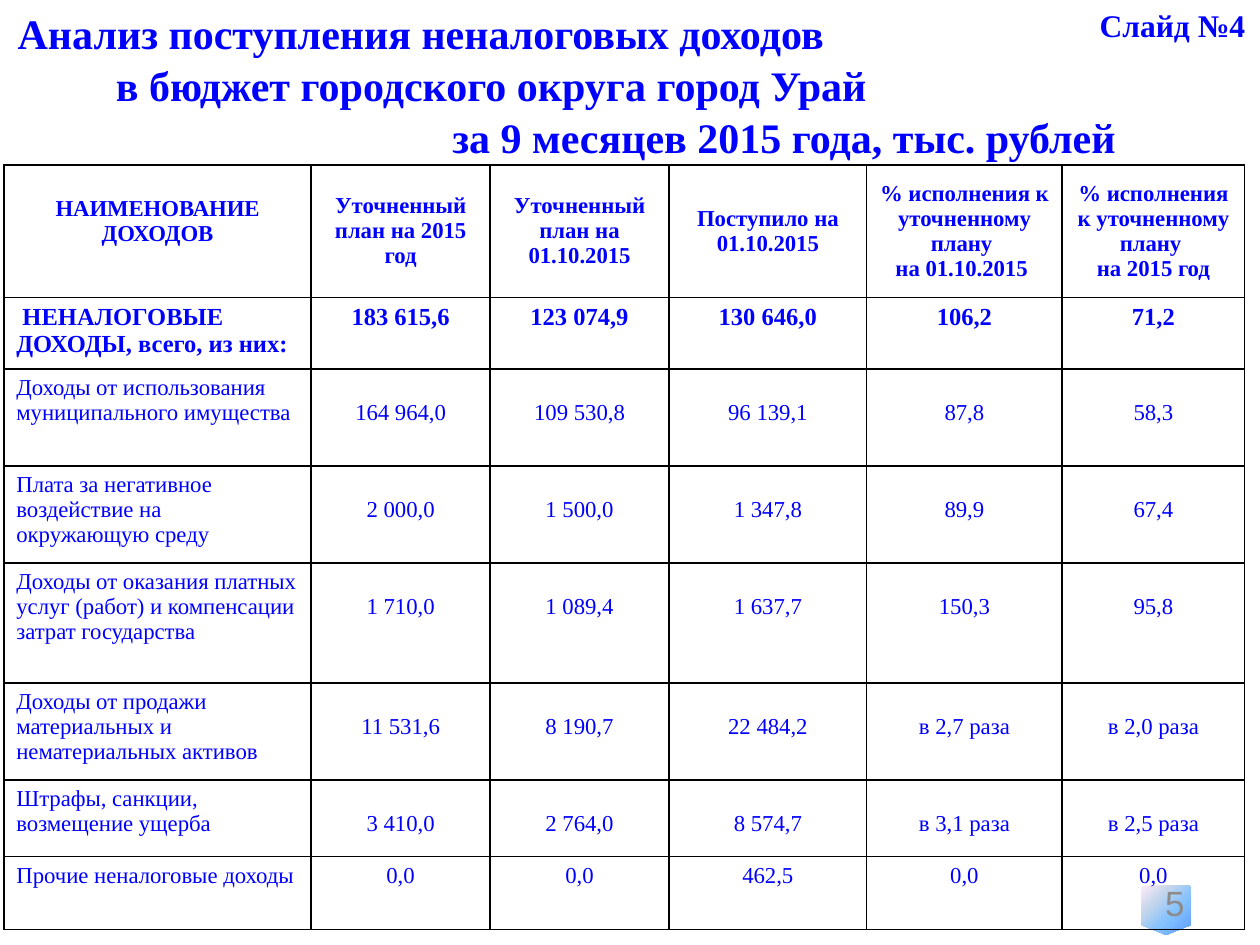
from dataclasses import dataclass

from lxml.etree import SubElement
from pptx import Presentation
from pptx.dml.color import RGBColor
from pptx.enum.shapes import MSO_SHAPE as Shape
from pptx.enum.text import MSO_ANCHOR as Anchor, MSO_AUTO_SIZE as AutoSize, PP_ALIGN as Align
from pptx.oxml import parse_xml
from pptx.oxml.ns import nsdecls, qn
from pptx.util import Inches, Pt


@dataclass(frozen=True)
class Theme:
    font: str = "Times New Roman"
    number_font: str = "Arial"
    text: str = "0000FF"
    number: str = "8C8C8C"
    border: str = "000000"
    badge: tuple = ((0, "5E9EFF"), (40, "85C2FF"), (70, "C4D6EB"), (100, "FFEBFA"))
    title_size: int = 24
    label_size: int = 18
    number_size: int = 20
    total_size: int = 14
    cell_size: int = 13


@dataclass(frozen=True)
class Row:
    name: str
    values: tuple
    height: float
    size: int
    bold: bool = False
    name_align: Align = Align.LEFT
    name_drop: float = 0
    value_drop: float = 0.2
    value_anchor: Anchor = Anchor.TOP


THEME = Theme()
TITLE = (
    ("Анализ поступления неналоговых доходов", 0),
    ("в бюджет городского округа город Урай", 0.78),
    ("за 9 месяцев 2015 года, тыс. рублей", 3.45),
)
COLUMNS = (2.44, 1.42, 1.42, 1.57, 1.55, 1.45)
CELL = THEME.cell_size
ROWS = (
    Row("НАИМЕНОВАНИЕ ДОХОДОВ",
        ("Уточненный план на 2015 год", "Уточненный план на 01.10.2015",
         "Поступило на 01.10.2015",
         "% исполнения к уточненному плану \nна 01.10.2015 ",
         "% исполнения к уточненному плану \nна 2015 год"),
        1.05, CELL, True, Align.CENTER, 0.2, 0, Anchor.MIDDLE),
    Row(" НЕНАЛОГОВЫЕ ДОХОДЫ, всего, из них:",
        ("183 615,6", "123 074,9", "130 646,0", "106,2", "71,2"),
        0.57, THEME.total_size, True, value_drop=0),
    Row("Доходы от использования муниципального имущества",
        ("164 964,0", "109 530,8", "96 139,1", "87,8", "58,3"), 0.77, CELL),
    Row("Плата за негативное воздействие на окружающую среду",
        ("2 000,0", "1 500,0", "1 347,8", "89,9", "67,4"), 0.77, CELL),
    Row("Доходы от оказания платных услуг (работ) и компенсации затрат государства",
        ("1 710,0", "1 089,4", "1 637,7", "150,3", "95,8"), 0.95, CELL),
    Row("Доходы от продажи материальных и нематериальных активов",
        ("11 531,6", "8 190,7", "22 484,2", "в 2,7 раза", "в 2,0 раза"), 0.77, CELL),
    Row("Штрафы, санкции, возмещение ущерба",
        ("3 410,0", "2 764,0", "8 574,7", "в 3,1 раза", "в 2,5 раза"), 0.61, CELL),
    Row("Прочие неналоговые доходы",
        ("0,0", "0,0", "462,5", "0,0", "0,0"), 0.58, CELL, value_drop=0),
)


def write(tf, text: str, size: int, align: Align, bold: bool = False,
          font: str = THEME.font, color: str = THEME.text) -> None:
    tf.text = text
    for p in tf.paragraphs:
        p.alignment = align
        for r in p.runs:
            r.font.name = font
            r.font.size = Pt(size)
            r.font.bold = bold
            r.font.color.rgb = RGBColor.from_string(color)


def add_text(s, box: tuple, text: str, size: int, align: Align, wrap: bool, **style):
    tf = s.shapes.add_textbox(*map(Inches, box)).text_frame
    tf.word_wrap = wrap
    write(tf, text, size, align, **style)
    return tf


def add_title(s) -> None:
    sp = s.shapes.title
    sp.left, sp.top, sp.width, sp.height = map(Inches, (0.04, 0, 9.96, 1.31))
    tf = sp.text_frame
    write(tf, "\n".join(line for line, _ in TITLE), THEME.title_size, Align.LEFT, True)
    tf.auto_size = AutoSize.NONE
    tf.vertical_anchor = Anchor.TOP
    for p, (_, indent) in zip(tf.paragraphs, TITLE):
        p.line_spacing = 1.03
        pPr = p._p.get_or_add_pPr()
        pPr.set("marL", str(Inches(indent)))
        pPr.set("indent", "0")


def add_badge(s) -> None:
    sp = s.shapes.add_shape(Shape.FLOWCHART_OFFPAGE_CONNECTOR,
                            *map(Inches, (9.06, 7.03, 0.39, 0.39)))
    sp.shadow.inherit = False
    sp.line.fill.background()
    stops = "".join(f'<a:gs pos="{pos * 1000}"><a:srgbClr val="{color}"/></a:gs>'
                    for pos, color in THEME.badge)
    grad = parse_xml(f'<a:gradFill {nsdecls("a")}><a:gsLst>{stops}</a:gsLst>'
                     '<a:path path="circle"><a:fillToRect l="100000" t="100000"/></a:path>'
                     '</a:gradFill>')
    sp._element.spPr.find(qn("a:prstGeom")).addnext(grad)


def add_borders(cell) -> None:
    tcPr = cell._tc.get_or_add_tcPr()
    for i, side in enumerate("LRTB"):
        ln = parse_xml(f'<a:ln{side} {nsdecls("a")} w="{Pt(1)}"/>')
        fill = SubElement(ln, qn("a:solidFill"))
        SubElement(fill, qn("a:srgbClr"), val=THEME.border)
        tcPr.insert(i, ln)


def fill_cell(cell, text: str, row: Row, align: Align, drop: float, anchor: Anchor) -> None:
    write(cell.text_frame, text, row.size, align, row.bold)
    cell.vertical_anchor = anchor
    cell.margin_top = Inches(0.05 + drop)
    cell.fill.background()
    add_borders(cell)


def add_income_table(s) -> None:
    height = sum(row.height for row in ROWS)
    box = map(Inches, (0.03, 1.31, sum(COLUMNS), height))
    table = s.shapes.add_table(len(ROWS), len(COLUMNS), *box).table
    table.first_row = table.horz_banding = False
    for col, width in zip(table.columns, COLUMNS):
        col.width = Inches(width)
    for tr, row in zip(table.rows, ROWS):
        tr.height = Inches(row.height)
        name, *values = tr.cells
        fill_cell(name, row.name, row, row.name_align, row.name_drop, Anchor.TOP)
        for cell, value in zip(values, row.values):
            fill_cell(cell, value, row, Align.CENTER, row.value_drop, row.value_anchor)


def main() -> None:
    prs = Presentation()
    prs.slide_width, prs.slide_height = Inches(10), Inches(7.5)
    s = prs.slides.add_slide(prs.slide_layouts[5])
    add_badge(s)
    number = add_text(s, (7.17, 6.95, 2.33, 0.43), "5", THEME.number_size, Align.RIGHT, True,
                      font=THEME.number_font, color=THEME.number)
    number.vertical_anchor = Anchor.MIDDLE
    add_title(s)
    add_income_table(s)
    label = add_text(s, (8.63, 0, 1.37, 0.4), "Слайд №4", THEME.label_size, Align.LEFT, False,
                     bold=True)
    label.auto_size = AutoSize.SHAPE_TO_FIT_TEXT
    prs.save("out.pptx")


if __name__ == "__main__":
    main()
